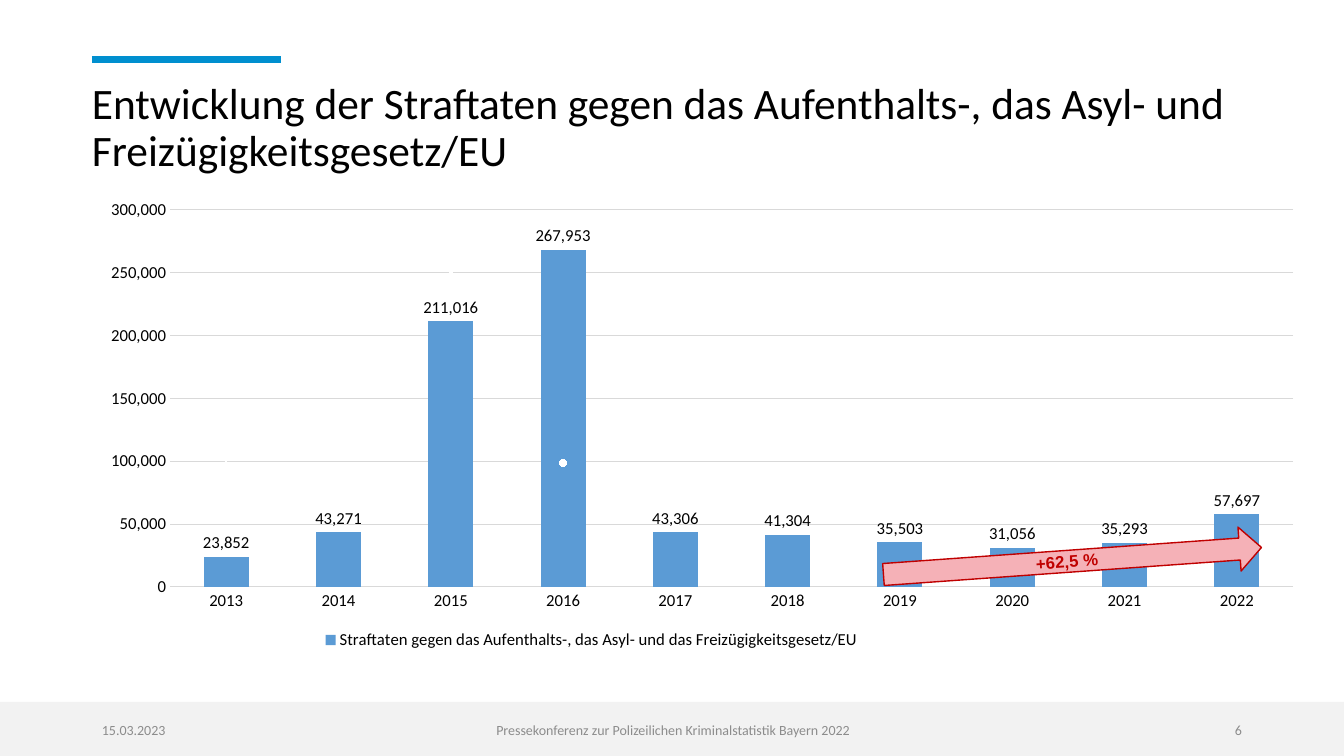
from dataclasses import dataclass

from lxml import etree
from pptx import Presentation
from pptx.chart.data import CategoryChartData
from pptx.dml.color import RGBColor
from pptx.enum.chart import XL_CHART_TYPE, XL_LEGEND_POSITION, XL_TICK_MARK
from pptx.enum.shapes import MSO_CONNECTOR, MSO_SHAPE
from pptx.enum.text import MSO_ANCHOR, PP_ALIGN
from pptx.oxml import parse_xml
from pptx.oxml.ns import nsdecls, qn
from pptx.util import Emu, Pt

LEFT, CENTER, RIGHT = PP_ALIGN.LEFT, PP_ALIGN.CENTER, PP_ALIGN.RIGHT
TOP, MIDDLE = MSO_ANCHOR.TOP, MSO_ANCHOR.MIDDLE
RECTANGLE, RIGHT_ARROW = MSO_SHAPE.RECTANGLE, MSO_SHAPE.RIGHT_ARROW
STRAIGHT = MSO_CONNECTOR.STRAIGHT
COLUMNS = XL_CHART_TYPE.COLUMN_CLUSTERED
LEGEND_BOTTOM = XL_LEGEND_POSITION.BOTTOM
NO_TICK = XL_TICK_MARK.NONE
EMU_PER_PX = 914400 / 100.8


@dataclass(frozen=True)
class Theme:
    font: str = "Calibri"
    arrow_font: str = "Arial"
    black: str = "000000"
    white: str = "FFFFFF"
    band: str = "F2F2F2"
    accent: str = "008FCF"
    muted: str = "8C8C8C"
    grid: str = "D9D9D9"
    column: str = "5B9BD5"
    arrow_fill: str = "F5B1B7"
    arrow_line: str = "C00000"
    title_size: int = 31
    chart_size: int = 12
    footer_size: int = 10


@dataclass(frozen=True)
class FooterItem:
    text: str
    left: int
    width: int
    align: PP_ALIGN


THEME = Theme()
FOOTER = (
    FooterItem("15.03.2023", 92, 302, LEFT),
    FooterItem("Pressekonferenz zur Polizeilichen Kriminalstatistik Bayern 2022", 446, 454, CENTER),
    FooterItem("6", 950, 302, RIGHT),
)
YEARS = [str(year) for year in range(2013, 2023)]
OFFENCES = (23852, 43271, 211016, 267953, 43306, 41304, 35503, 31056, 35293, 57697)
CHANGES = (40, 80, 390, 30, -80, 0, -10, -10, 10, 60)


def px(length: int) -> Emu:
    return Emu(round(length * EMU_PER_PX))


def rgb(color: str) -> RGBColor:
    return RGBColor.from_string(color)


def style_font(font, size: int, color: str, name: str = THEME.font, bold: bool = False) -> None:
    font.size, font.name, font.bold = Pt(size), name, bold
    font.color.rgb = rgb(color)


def write(shape, text: str, *, size: int, color: str, font: str = THEME.font, bold: bool = False,
          align: PP_ALIGN = LEFT, anchor: MSO_ANCHOR = MIDDLE, spacing: float = 1.0) -> None:
    frame = shape.text_frame
    frame.word_wrap = True
    frame.vertical_anchor = anchor
    paragraph = frame.paragraphs[0]
    paragraph.alignment, paragraph.line_spacing = align, spacing
    run = paragraph.add_run()
    run.text = text
    style_font(run.font, size, color, font, bold)


def add_box(slide, left: int, top: int, width: int, height: int):
    return slide.shapes.add_textbox(px(left), px(top), px(width), px(height))


def add_filled(slide, kind: MSO_SHAPE, left: int, top: int, width: int, height: int, fill: str):
    shape = slide.shapes.add_shape(kind, px(left), px(top), px(width), px(height))
    shape.shadow.inherit = False
    shape.fill.solid()
    shape.fill.fore_color.rgb = rgb(fill)
    shape.line.fill.background()
    return shape


def add_layout(parent, position: int, inner: bool, **shares: float) -> None:
    target = '<c:layoutTarget val="inner"/>' if inner else ""
    modes = '<c:xMode val="edge"/><c:yMode val="edge"/>'
    values = "".join(f'<c:{key} val="{value}"/>' for key, value in shares.items())
    for old in parent.findall(qn("c:layout")):
        parent.remove(old)
    parent.insert(position, parse_xml(
        f'<c:layout {nsdecls("c")}><c:manualLayout>{target}{modes}{values}</c:manualLayout></c:layout>'))


def move_changes_to_second_axis(chart) -> None:
    """Turn the second series into white markers on a hidden right axis."""
    plot_area = chart._chartSpace.chart.plotArea
    bars = plot_area.find(qn("c:barChart"))
    changes = bars.findall(qn("c:ser"))[1]
    bars.remove(changes)
    for tag in ("c:invertIfNegative", "c:spPr"):
        for part in changes.findall(qn(tag)):
            changes.remove(part)
    space = nsdecls("c", "a")
    hidden_line = "<c:spPr><a:ln><a:noFill/></a:ln></c:spPr>"
    marker = parse_xml(
        f'<c:marker {space}><c:symbol val="circle"/><c:size val="5"/><c:spPr><a:solidFill>'
        f'<a:srgbClr val="{THEME.white}"/></a:solidFill><a:ln><a:noFill/></a:ln></c:spPr></c:marker>')
    no_line = parse_xml(f'<c:spPr {space}><a:ln w="28575"><a:noFill/></a:ln></c:spPr>')
    heading = changes.find(qn("c:tx"))
    heading.addnext(no_line)
    no_line.addnext(marker)
    etree.SubElement(changes, qn("c:smooth")).set("val", "0")
    lines = parse_xml(
        f'<c:lineChart {space}><c:grouping val="standard"/><c:varyColors val="0"/>'
        '<c:marker val="1"/><c:axId val="5001"/><c:axId val="5002"/></c:lineChart>')
    lines.insert(2, changes)
    bars.addnext(lines)
    value_axis = parse_xml(
        f'<c:valAx {space}><c:axId val="5002"/><c:scaling><c:orientation val="minMax"/>'
        '<c:max val="500"/><c:min val="-200"/></c:scaling><c:delete val="0"/><c:axPos val="r"/>'
        '<c:numFmt formatCode="General" sourceLinked="0"/><c:majorTickMark val="out"/>'
        f'<c:minorTickMark val="none"/><c:tickLblPos val="none"/>{hidden_line}'
        '<c:crossAx val="5001"/><c:crosses val="max"/></c:valAx>')
    year_axis = parse_xml(
        f'<c:catAx {space}><c:axId val="5001"/><c:scaling><c:orientation val="minMax"/></c:scaling>'
        '<c:delete val="1"/><c:axPos val="b"/><c:crossAx val="5002"/><c:crosses val="autoZero"/></c:catAx>')
    plot_area.find(qn("c:valAx")).addnext(value_axis)
    value_axis.addnext(year_axis)


def add_offence_chart(slide) -> None:
    data = CategoryChartData(number_format="#,##0")
    data.categories = YEARS
    data.add_series("Straftaten gegen das Aufenthalts-, das Asyl- und das Freizügigkeitsgesetz/EU", OFFENCES)
    data.add_series("Series 2", CHANGES)
    chart = slide.shapes.add_chart(COLUMNS, px(92), px(198), px(1207), px(481), data).chart
    chart.has_title = False
    style_font(chart.font, THEME.chart_size, THEME.black)

    plot = chart.plots[0]
    plot.gap_width, plot.vary_by_categories = 150, False
    offences = plot.series[0]
    offences.format.fill.solid()
    offences.format.fill.fore_color.rgb = rgb(THEME.column)
    labels = offences.data_labels
    labels.show_value = True
    labels.number_format, labels.number_format_is_linked = "#,##0", False
    style_font(labels.font, THEME.chart_size, THEME.black)

    years, counts = chart.category_axis, chart.value_axis
    for axis in (years, counts):
        axis.major_tick_mark = axis.minor_tick_mark = NO_TICK
        style_font(axis.tick_labels.font, THEME.chart_size, THEME.black)
    counts.minimum_scale, counts.maximum_scale, counts.major_unit = 0, 300000, 50000
    counts.tick_labels.number_format, counts.tick_labels.number_format_is_linked = "#,##0", False
    counts.format.line.fill.background()
    for rule in (years.format.line, counts.major_gridlines.format.line):
        rule.color.rgb, rule.width = rgb(THEME.grid), Pt(0.75)

    chart.has_legend = True
    legend = chart.legend
    legend.position, legend.include_in_layout = LEGEND_BOTTOM, False
    style_font(legend.font, THEME.chart_size, THEME.black)
    legend_part = chart._chartSpace.chart.find(qn("c:legend"))
    add_layout(legend_part, 1, False, x=0.19, y=0.89)
    legend_part.insert(1, parse_xml(
        f'<c:legendEntry {nsdecls("c")}><c:idx val="1"/><c:delete val="1"/></c:legendEntry>'))
    move_changes_to_second_axis(chart)
    add_layout(chart._chartSpace.chart.plotArea, 0, True, x=0.065, y=0.024, w=0.935, h=0.785)


def main() -> None:
    deck = Presentation()
    deck.slide_width, deck.slide_height = px(1344), px(756)
    slide = deck.slides.add_slide(deck.slide_layouts[6])

    add_filled(slide, RECTANGLE, 0, 702, 1344, 54, THEME.band)
    accent = slide.shapes.add_connector(STRAIGHT, px(92), px(60), px(281), px(60))
    accent.line.color.rgb, accent.line.width = rgb(THEME.accent), Pt(5)
    etree.SubElement(accent._element.spPr, qn("a:effectLst"))

    title = add_box(slide, 92, 77, 1159, 121)
    title.text_frame.margin_left = 0
    write(title, "Entwicklung der Straftaten gegen das Aufenthalts-, das Asyl- und Freizügigkeitsgesetz/EU",
          size=THEME.title_size, color=THEME.black, anchor=TOP, spacing=0.9)
    for item in FOOTER:
        write(add_box(slide, item.left, 710, item.width, 40), item.text,
              size=THEME.footer_size, color=THEME.muted, align=item.align)

    add_offence_chart(slide)
    increase = add_filled(slide, RIGHT_ARROW, 883, 539, 379, 44, THEME.arrow_fill)
    increase.rotation = 355.9
    increase.line.color.rgb, increase.line.width = rgb(THEME.arrow_line), Pt(1)
    write(increase, "+62,5 %", size=THEME.chart_size, color=THEME.arrow_line,
          font=THEME.arrow_font, bold=True, align=CENTER)
    deck.save("out.pptx")


if __name__ == "__main__":
    main()
